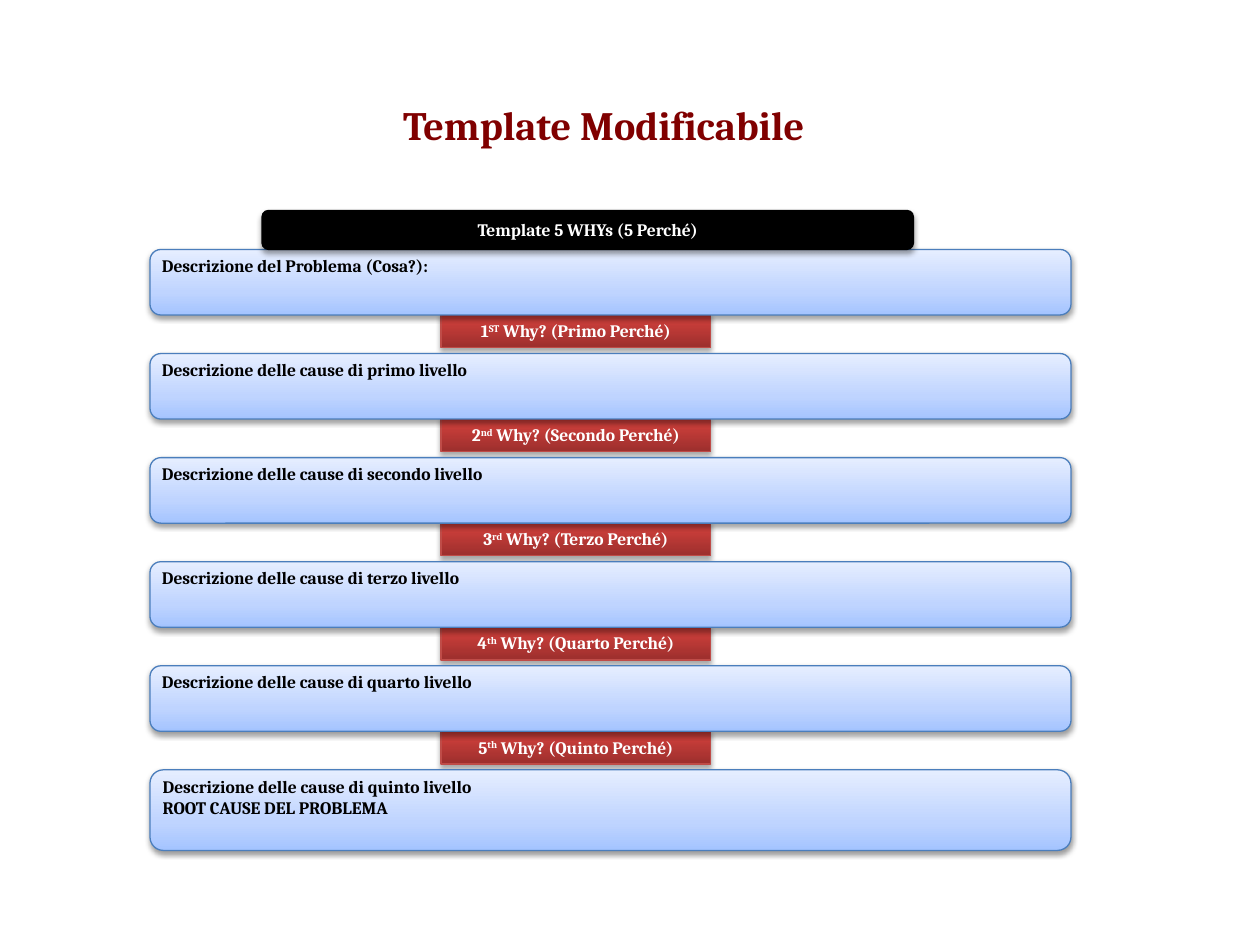
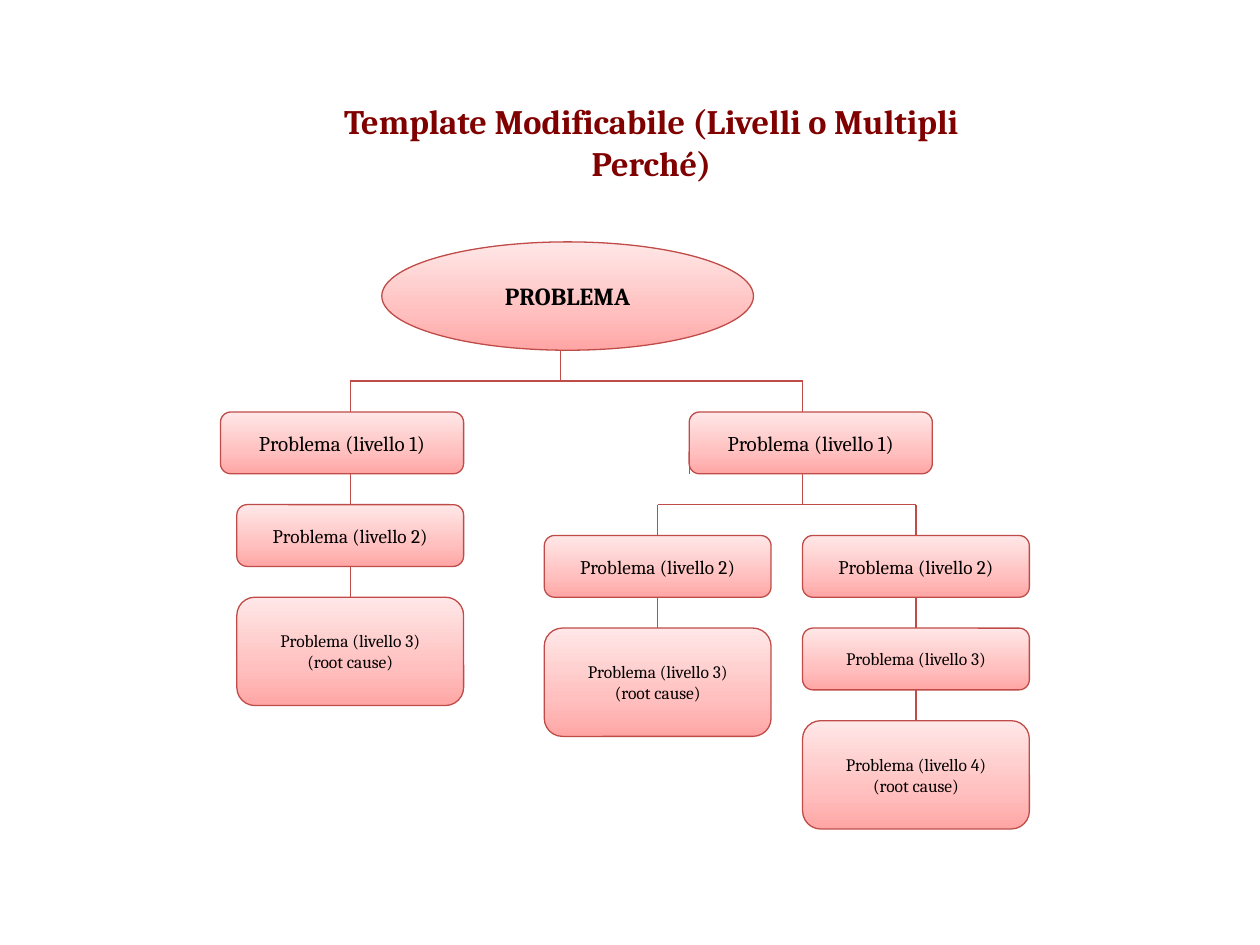
from dataclasses import dataclass

from lxml import etree
from pptx import Presentation
from pptx.dml.color import RGBColor
from pptx.enum import shapes, text
from pptx.oxml.ns import qn
from pptx.util import Inches, Pt


@dataclass(frozen=True)
class Theme:
    font: str = "Cambria"
    title: str = "800000"
    dark: str = "000000"
    light: str = "FFFFFF"
    red_line: str = "BF4C48"
    blue_line: str = "4B7EBC"
    # Gradient stops run from bottom to top
    red: tuple = ((0, "9C2F2D"), (80, "CB3E3A"), (100, "CE3B37"))
    blue: tuple = ((0, "A4C4FF"), (35, "BFD4FF"), (100, "E6EEFF"))
    pink: tuple = ((0, "FFA6A5"), (35, "FFC0BF"), (100, "FFE7E7"))
    line_width: float = 0.75
    body_size: float = 10
    problem_size: float = 14
    level_sizes: tuple = (12, 11, 10, 10)


THEME = Theme()
RECT = shapes.MSO_SHAPE.RECTANGLE
ROUND = shapes.MSO_SHAPE.ROUNDED_RECTANGLE
OVAL = shapes.MSO_SHAPE.OVAL
LEFT, CENTER = text.PP_ALIGN.LEFT, text.PP_ALIGN.CENTER
TOP, MIDDLE = text.MSO_ANCHOR.TOP, text.MSO_ANCHOR.MIDDLE

# Vertical rhythm of the problem tree
NODE_H, ROOT_H, NODE_W, WIDE_W = 0.49, 0.86, 1.8, 1.93
GAP = NODE_H / 2


# ---- Formatting helpers ----
def style_runs(tf, size, color, bold=False, align=CENTER):
    for p in tf.paragraphs:
        p.alignment = align
        for r in p.runs:
            r.font.name = THEME.font
            r.font.size = Pt(size)
            r.font.bold = bold
            r.font.color.rgb = RGBColor.from_string(color)


def fill_shape(sp, fill):
    """Fill with one colour, or with a vertical gradient of (percent, colour)."""
    if isinstance(fill, str):
        sp.fill.solid()
        sp.fill.fore_color.rgb = RGBColor.from_string(fill)
        return
    sp.fill.gradient()
    sp.fill.gradient_angle = 90
    stops = sp._element.spPr.find(qn("a:gradFill")).find(qn("a:gsLst"))
    for gs in list(stops):
        stops.remove(gs)
    for percent, color in fill:
        gs = etree.SubElement(stops, qn("a:gs"), pos=str(percent * 1000))
        etree.SubElement(gs, qn("a:srgbClr"), val=color)


def cast_shadow(sp, opacity, distance):
    effects = sp._element.spPr.find(qn("a:effectLst"))
    shadow = etree.SubElement(effects, qn("a:outerShdw"), blurRad=str(Pt(3.1)),
                              dist=str(Pt(distance)), dir="5400000", rotWithShape="0")
    color = etree.SubElement(shadow, qn("a:srgbClr"), val=THEME.dark)
    etree.SubElement(color, qn("a:alpha"), val=str(opacity * 1000))


# ---- Elements ----
def add_title(slide, words, width, size):
    tf = slide.shapes.add_textbox(Inches(2.17), Inches(0.75),
                                  Inches(width), Inches(0.63)).text_frame
    tf.word_wrap = True
    tf.text = words
    style_runs(tf, size, THEME.title, bold=True)


def add_box(slide, kind, left, top, width, height, fill, line):
    sp = slide.shapes.add_shape(kind, Inches(left), Inches(top),
                                Inches(width), Inches(height))
    sp.shadow.inherit = False
    fill_shape(sp, fill)
    sp.line.color.rgb = RGBColor.from_string(line)
    sp.line.width = Pt(THEME.line_width)
    sp.text_frame.vertical_anchor = MIDDLE
    return sp


def add_why_label(slide, top, number, suffix, words):
    sp = add_box(slide, RECT, 3.5, top, 2.14, 0.27, THEME.red, THEME.red_line)
    cast_shadow(sp, 35, 1.8)
    p = sp.text_frame.paragraphs[0]
    for part in (str(number), suffix, f" Why? ({words})"):
        p.add_run().text = part
    style_runs(sp.text_frame, THEME.body_size, THEME.light, bold=True)
    p.runs[1]._r.get_or_add_rPr().set("baseline", "30000")


def add_description(slide, top, height, words):
    sp = add_box(slide, ROUND, 1.19, top, 7.31, height, THEME.blue, THEME.blue_line)
    cast_shadow(sp, 38, 1.6)
    tf = sp.text_frame
    tf.vertical_anchor = TOP
    tf.margin_left, tf.margin_top = Inches(0.07), Inches(0.02)
    tf.text = words
    style_runs(tf, THEME.body_size, THEME.dark, bold=True, align=LEFT)


def add_node(slide, kind, left, top, width, height, words, size, bold=False):
    sp = add_box(slide, kind, left, top, width, height, THEME.pink, THEME.red_line)
    sp.text_frame.text = words
    style_runs(sp.text_frame, size, THEME.dark, bold)


def add_line(slide, x1, y1, x2, y2):
    cx = slide.shapes.add_connector(shapes.MSO_CONNECTOR.STRAIGHT, Inches(x1),
                                    Inches(y1), Inches(x2), Inches(y2))
    cx.line.color.rgb = RGBColor.from_string(THEME.red_line)
    cx.line.width = Pt(THEME.line_width)
    etree.SubElement(cx._element.spPr, qn("a:effectLst"))


def add_drop(slide, x, top):
    add_line(slide, x, top, x, top + GAP)


def add_fork(slide, x, top, branches):
    """Drop from a parent, run across, then drop to each branch."""
    add_drop(slide, x, top)
    add_line(slide, branches[0], top + GAP, branches[-1], top + GAP)
    for branch in branches:
        add_drop(slide, branch, top + GAP)
    return top + 2 * GAP


def add_chain(slide, x, top, levels, root=True, wide_left=None):
    """Stack problem levels along one spine; the last may be the root cause."""
    for level in levels:
        words = f"Problema (livello {level})"
        left, width, height = x - NODE_W / 2, NODE_W, NODE_H
        if level == 1:
            left, width = wide_left, WIDE_W
        if root and level == levels[-1]:
            words, height = words + "\n(root cause)", ROOT_H
        if level != levels[0]:
            add_drop(slide, x, top - GAP)
        add_node(slide, ROUND, left, top, width, height, words,
                 THEME.level_sizes[level - 1])
        top += height + GAP
    return top - GAP


# ---- Slides ----
def build_five_whys(slide):
    add_title(slide, "Template Modificabile", 5.25, 23)
    whys = [("ST", "Primo Perché"), ("nd", "Secondo Perché"), ("rd", "Terzo Perché"),
            ("th", "Quarto Perché"), ("th", "Quinto Perché")]
    causes = ["primo", "secondo", "terzo", "quarto", "quinto"]
    first, last = 1.98, 6.11
    pitch = (last - first) / len(whys)

    # Red labels lie behind the blue boxes
    for i, (suffix, words) in enumerate(whys):
        add_why_label(slide, 2.49 + i * pitch, i + 1, suffix, words)

    descriptions = ["Descrizione del Problema (Cosa?):"]
    descriptions += [f"Descrizione delle cause di {cause} livello" for cause in causes]
    descriptions[-1] += "\nROOT CAUSE DEL PROBLEMA"
    for i, words in enumerate(descriptions):
        add_description(slide, first + i * pitch, 0.64 if "\n" in words else 0.52, words)

    # Black header bar
    bar = add_box(slide, ROUND, 2.08, 1.67, 5.17, 0.31, THEME.dark, THEME.dark)
    cast_shadow(bar, 38, 1.6)
    bar.text_frame.text = "Template 5 WHYs (5 Perché)"
    style_runs(bar.text_frame, THEME.body_size, THEME.light, bold=True)


def build_problem_tree(slide):
    add_title(slide, "Template Modificabile (Livelli o Multipli Perché)", 6, 19.6)
    top, left_x, right_x = 1.92, 2.78, 6.37
    add_node(slide, OVAL, 3.03, top, 2.95, ROOT_H, "PROBLEMA",
             THEME.problem_size, bold=True)
    level_1 = add_fork(slide, 4.45, top + ROOT_H, (left_x, right_x))

    # Left branch
    add_chain(slide, left_x, level_1, (1, 2, 3), wide_left=1.75)

    # Right branch splits in two
    bottom = add_chain(slide, right_x, level_1, (1,), root=False, wide_left=5.47)
    add_line(slide, 5.47, bottom - GAP, 5.47, bottom)
    sub_branches = (5.22, 7.27)
    level_2 = add_fork(slide, right_x, bottom, sub_branches)
    for x, levels in zip(sub_branches, ((2, 3), (2, 3, 4))):
        add_chain(slide, x, level_2, levels)


def main():
    prs = Presentation()
    prs.slide_width, prs.slide_height = Inches(10), Inches(7.5)
    for build in (build_five_whys, build_problem_tree):
        build(prs.slides.add_slide(prs.slide_layouts[6]))
    prs.save("out.pptx")


if __name__ == "__main__":
    main()
